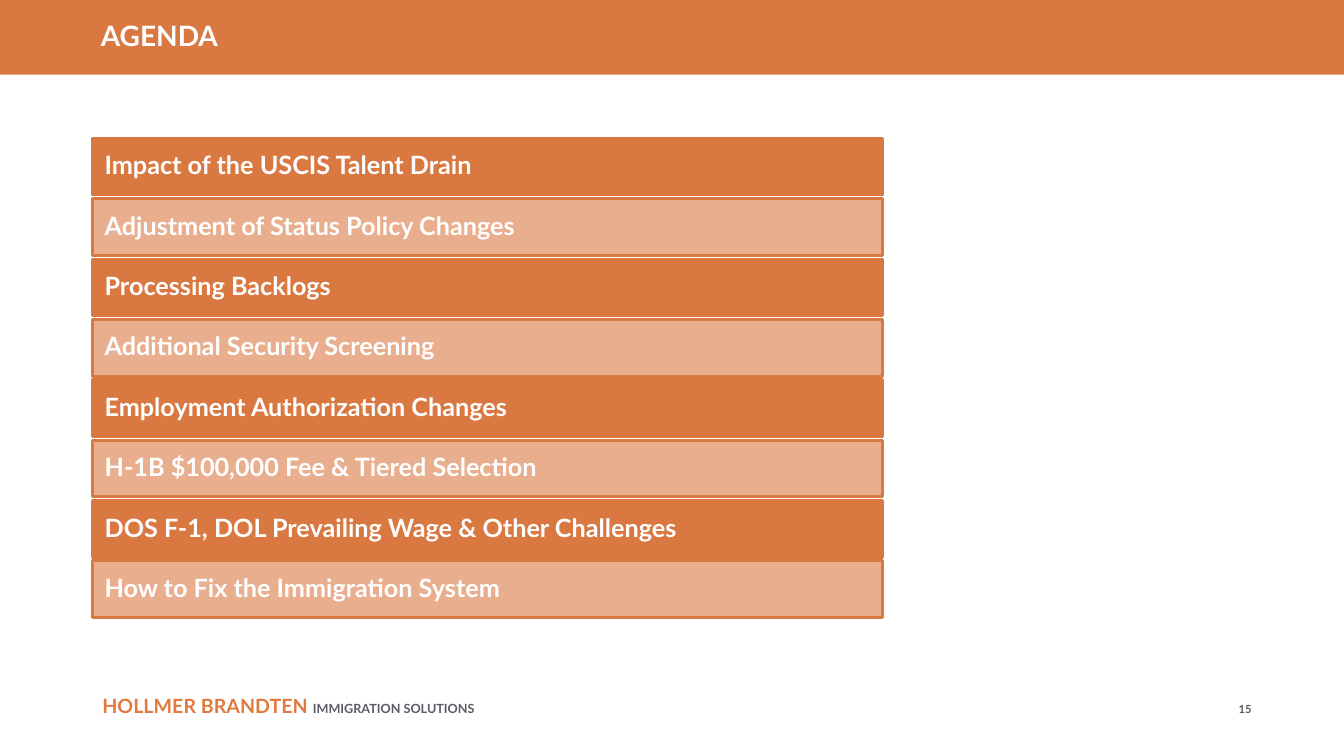
from pptx import Presentation
from pptx.dml.color import RGBColor
from pptx.enum.shapes import MSO_SHAPE
from pptx.enum.text import MSO_ANCHOR, MSO_AUTO_SIZE, PP_ALIGN
from pptx.util import Pt

FONT = "Lato"
ORANGE = "DA7841"
PALE_ORANGE = "E9AE8D"
BRAND_ORANGE = "E27A3D"
WHITE = "FFFFFF"
GREY = "5A5B64"

TOPICS = [
    "Impact of the USCIS Talent Drain",
    "Adjustment of Status Policy Changes",
    "Processing Backlogs",
    "Additional Security Screening",
    "Employment Authorization Changes",
    "H-1B $100,000 Fee & Tiered Selection",
    "DOS F-1, DOL Prevailing Wage & Other Challenges",
    "How to Fix the Immigration System",
]
LEFT = 66
BAR_TOP, BAR_WIDTH, BAR_HEIGHT, BAR_PITCH = 98.8, 564.5, 40.6, 43.12


def color(value):
    return RGBColor.from_string(value)


def fill_shape(shape, value):
    shape.fill.solid()
    shape.fill.fore_color.rgb = color(value)


def place(shape, left, top, width, height):
    shape.left, shape.top = Pt(left), Pt(top)
    shape.width, shape.height = Pt(width), Pt(height)


def set_frame(shape, side, edge, anchor=MSO_ANCHOR.MIDDLE):
    """Set the margins, wrapping and anchor of a shape's text."""
    frame = shape.text_frame
    frame.word_wrap = True
    frame.auto_size = MSO_AUTO_SIZE.NONE
    frame.vertical_anchor = anchor
    frame.margin_left = frame.margin_right = Pt(side)
    frame.margin_top = frame.margin_bottom = Pt(edge)
    return frame


def write(frame, spans, align=PP_ALIGN.LEFT, line_spacing=1.0):
    """Fill the first paragraph with (text, size, colour) spans in bold."""
    para = frame.paragraphs[0]
    para.alignment = align
    para.line_spacing = line_spacing
    for text, size, value in spans:
        span = para.add_run()
        span.text = text
        span.font.name = FONT
        span.font.size = Pt(size)
        span.font.bold = True
        span.font.color.rgb = color(value)


def add_title(page, text):
    title = page.shapes.title
    place(title, 0, 0, 960, 53.3)
    fill_shape(title, ORANGE)
    write(set_frame(title, 72, 3.6), [(text, 20, WHITE)], line_spacing=0.9)


def add_bar(page, index, text):
    bar = page.shapes.add_shape(
        MSO_SHAPE.RECTANGLE, Pt(LEFT), Pt(BAR_TOP + index * BAR_PITCH),
        Pt(BAR_WIDTH), Pt(BAR_HEIGHT))
    bar.shadow.inherit = False
    fill_shape(bar, PALE_ORANGE if index % 2 else ORANGE)
    bar.line.color.rgb = color(ORANGE)
    bar.line.width = Pt(2)
    write(set_frame(bar, 8.8, 4.5), [(text, 18, WHITE)], line_spacing=0.9)


def add_footer(page):
    box = page.shapes.add_textbox(Pt(LEFT), Pt(491.8), Pt(475), Pt(46))
    write(set_frame(box, 7.2, 3.6, MSO_ANCHOR.TOP),
          [("HOLLMER BRANDTEN ", 14, BRAND_ORANGE),
           ("IMMIGRATION SOLUTIONS", 9, GREY)])


def add_page_number(page, number):
    box = page.shapes.add_textbox(Pt(876), Pt(491.8), Pt(18), Pt(28.8))
    write(set_frame(box, 0, 3.6), [(number, 8, GREY)], PP_ALIGN.RIGHT)


def main():
    deck = Presentation()
    deck.slide_width, deck.slide_height = Pt(960), Pt(540)
    page = deck.slides.add_slide(deck.slide_layouts.get_by_name("Title Only"))
    add_footer(page)
    add_title(page, "AGENDA")
    add_page_number(page, "15")
    for index, topic in enumerate(TOPICS):
        add_bar(page, index, topic)
    deck.save("out.pptx")


if __name__ == "__main__":
    main()
